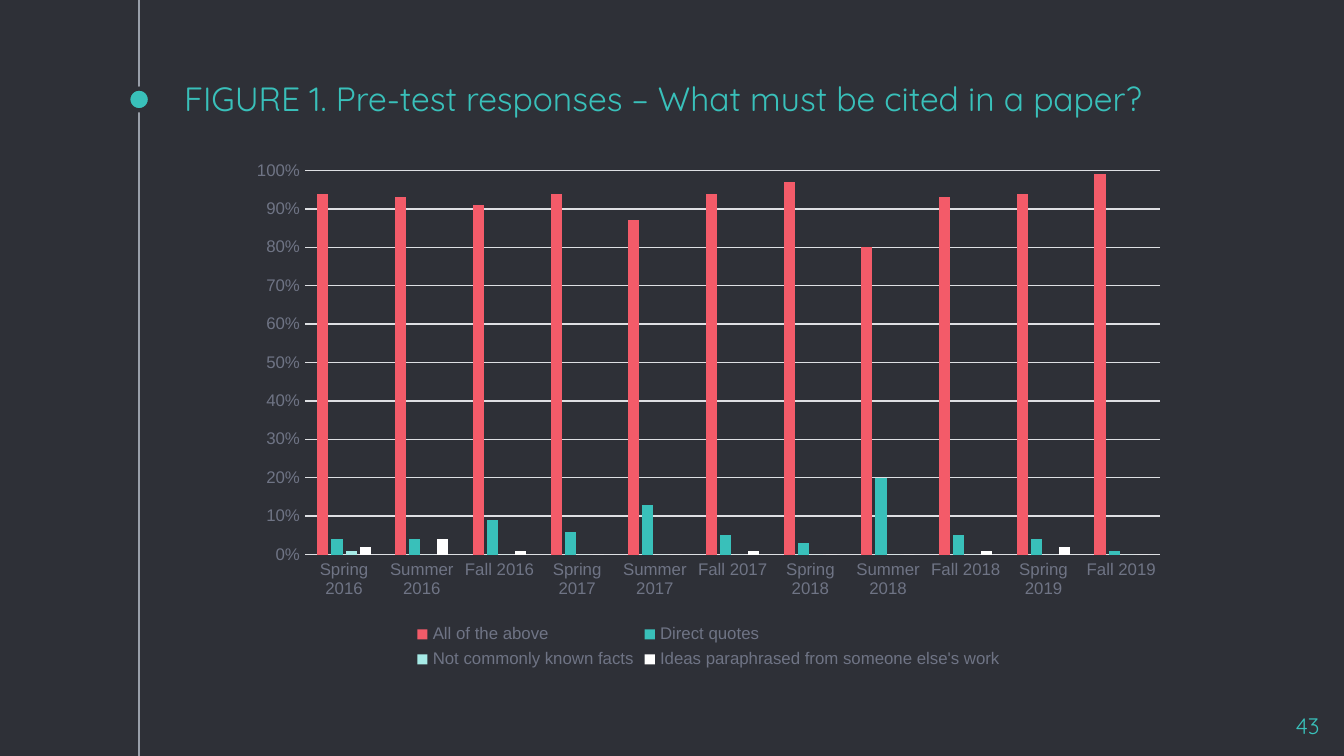
import pptx
import pptx.chart.data
import pptx.dml.color
import pptx.enum.chart
import pptx.enum.shapes
import pptx.enum.text
import pptx.oxml
import pptx.util
from pptx.util import Cm

TITLE = "FIGURE 1. Pre-test responses – What must be cited in a paper?"
PAGE_NUMBER = "43"
TERMS = [
    "Spring 2016", "Summer 2016", "Fall 2016",
    "Spring 2017", "Summer 2017", "Fall 2017",
    "Spring 2018", "Summer 2018", "Fall 2018",
    "Spring 2019", "Fall 2019",
]
# answer, colour name in THEME, share of responses per term
ANSWERS = [
    ("All of the above", "coral",
     [0.94, 0.93, 0.91, 0.94, 0.87, 0.94, 0.97, 0.8, 0.93, 0.94, 0.99]),
    ("Direct quotes", "teal",
     [0.04, 0.04, 0.09, 0.06, 0.13, 0.05, 0.03, 0.2, 0.05, 0.04, 0.01]),
    ("Not commonly known facts", "mint",
     [0.01, 0, 0, 0, 0, 0, 0, 0, 0, 0, 0]),
    ("Ideas paraphrased from someone else's work", "white",
     [0.02, 0.04, 0.01, 0, 0, 0.01, 0, 0, 0.01, 0.02, 0]),
]

THEME = {
    "background": "2E3037", "teal": "39C0BA", "coral": "F35B69",
    "mint": "A6EAE6", "white": "FFFFFF", "timeline": "999FA9",
    "grid": "DEDFE3", "label": "6F7485",
    "heading_font": "Quicksand", "chart_font": "Arial",
    "title_size": 18, "page_size": 12, "chart_size": 9,
}

SLIDE_WIDTH, SLIDE_HEIGHT = Cm(25.4), Cm(14.29)
TIMELINE_X, DOT_Y, DOT_SIZE = Cm(2.63), Cm(1.88), Cm(0.41)


def color(name):
    return pptx.dml.color.RGBColor.from_string(THEME[name])


def style_line(line, color_name, width):
    line.color.rgb = color(color_name)
    line.width = pptx.util.Pt(width)


def style_font(font, face, size, color_name):
    font.name = THEME[face]
    font.size = pptx.util.Pt(THEME[size])
    font.bold = False
    font.color.rgb = color(color_name)


def add_heading(slide, text, box, size, align, anchor):
    frame = slide.shapes.add_textbox(*box).text_frame
    frame.text = text
    frame.word_wrap = True
    frame.vertical_anchor = anchor
    frame.margin_left = frame.margin_right = Cm(0.25)
    frame.margin_top = frame.margin_bottom = Cm(0.25)
    paragraph = frame.paragraphs[0]
    paragraph.alignment = align
    style_font(paragraph.runs[0].font, "heading_font", size, "teal")


def add_timeline(slide):
    """Draw the full-height line with the dot beside the title."""
    timeline = slide.shapes.add_connector(
        pptx.enum.shapes.MSO_CONNECTOR.STRAIGHT,
        TIMELINE_X, 0, TIMELINE_X, SLIDE_HEIGHT)
    style_line(timeline.line, "timeline", 0.75)
    properties = timeline.element.spPr
    properties.append(properties.makeelement(
        pptx.oxml.ns.qn("a:effectLst"), {}))

    dot = slide.shapes.add_shape(
        pptx.enum.shapes.MSO_SHAPE.OVAL,
        TIMELINE_X - DOT_SIZE // 2, DOT_Y - DOT_SIZE // 2, DOT_SIZE, DOT_SIZE)
    dot.shadow.inherit = False
    dot.fill.solid()
    dot.fill.fore_color.rgb = color("teal")
    style_line(dot.line, "background", 2.25)


def add_response_chart(slide):
    responses = pptx.chart.data.CategoryChartData(number_format="0%")
    responses.categories = TERMS
    for answer, _, shares in ANSWERS:
        responses.add_series(answer, shares)
    chart = slide.shapes.add_chart(
        pptx.enum.chart.XL_CHART_TYPE.COLUMN_CLUSTERED,
        Cm(4.5), Cm(2.84), Cm(17.78), Cm(9.91), responses).chart
    chart.has_title = False
    style_font(chart.font, "chart_font", "chart_size", "label")

    chart.has_legend = True
    chart.legend.position = pptx.enum.chart.XL_LEGEND_POSITION.BOTTOM
    chart.legend.include_in_layout = False
    style_font(chart.legend.font, "chart_font", "chart_size", "label")

    for axis in (chart.category_axis, chart.value_axis):
        axis.major_tick_mark = pptx.enum.chart.XL_TICK_MARK.NONE
        axis.minor_tick_mark = pptx.enum.chart.XL_TICK_MARK.NONE
        style_font(axis.tick_labels.font, "chart_font", "chart_size", "label")
    style_line(chart.category_axis.format.line, "grid", 0.75)

    share_axis = chart.value_axis
    share_axis.minimum_scale, share_axis.maximum_scale = 0, 1
    share_axis.major_unit = 0.1
    share_axis.tick_labels.number_format = "0%"
    share_axis.tick_labels.number_format_is_linked = False
    share_axis.format.line.fill.background()
    share_axis.has_major_gridlines = True
    style_line(share_axis.major_gridlines.format.line, "grid", 0.75)

    plot = chart.plots[0]
    plot.vary_by_categories = False
    plot.gap_width, plot.overlap = 219, -27
    for series, (_, color_name, _) in zip(plot.series, ANSWERS):
        series.invert_if_negative = False
        series.format.fill.solid()
        series.format.fill.fore_color.rgb = color(color_name)


def main():
    deck = pptx.Presentation()
    deck.slide_width, deck.slide_height = SLIDE_WIDTH, SLIDE_HEIGHT
    slide = deck.slides.add_slide(deck.slide_layouts[6])
    slide.background.fill.solid()
    slide.background.fill.fore_color.rgb = color("background")

    add_timeline(slide)
    add_heading(slide, TITLE, (Cm(3.23), Cm(1.52), Cm(19.05), Cm(0.97)),
                "title_size", pptx.enum.text.PP_ALIGN.LEFT,
                pptx.enum.text.MSO_ANCHOR.BOTTOM)
    add_heading(slide, PAGE_NUMBER, (Cm(23.67), Cm(13.21), Cm(1.52), Cm(0.86)),
                "page_size", pptx.enum.text.PP_ALIGN.RIGHT,
                pptx.enum.text.MSO_ANCHOR.TOP)
    add_response_chart(slide)
    deck.save("out.pptx")


if __name__ == "__main__":
    main()
